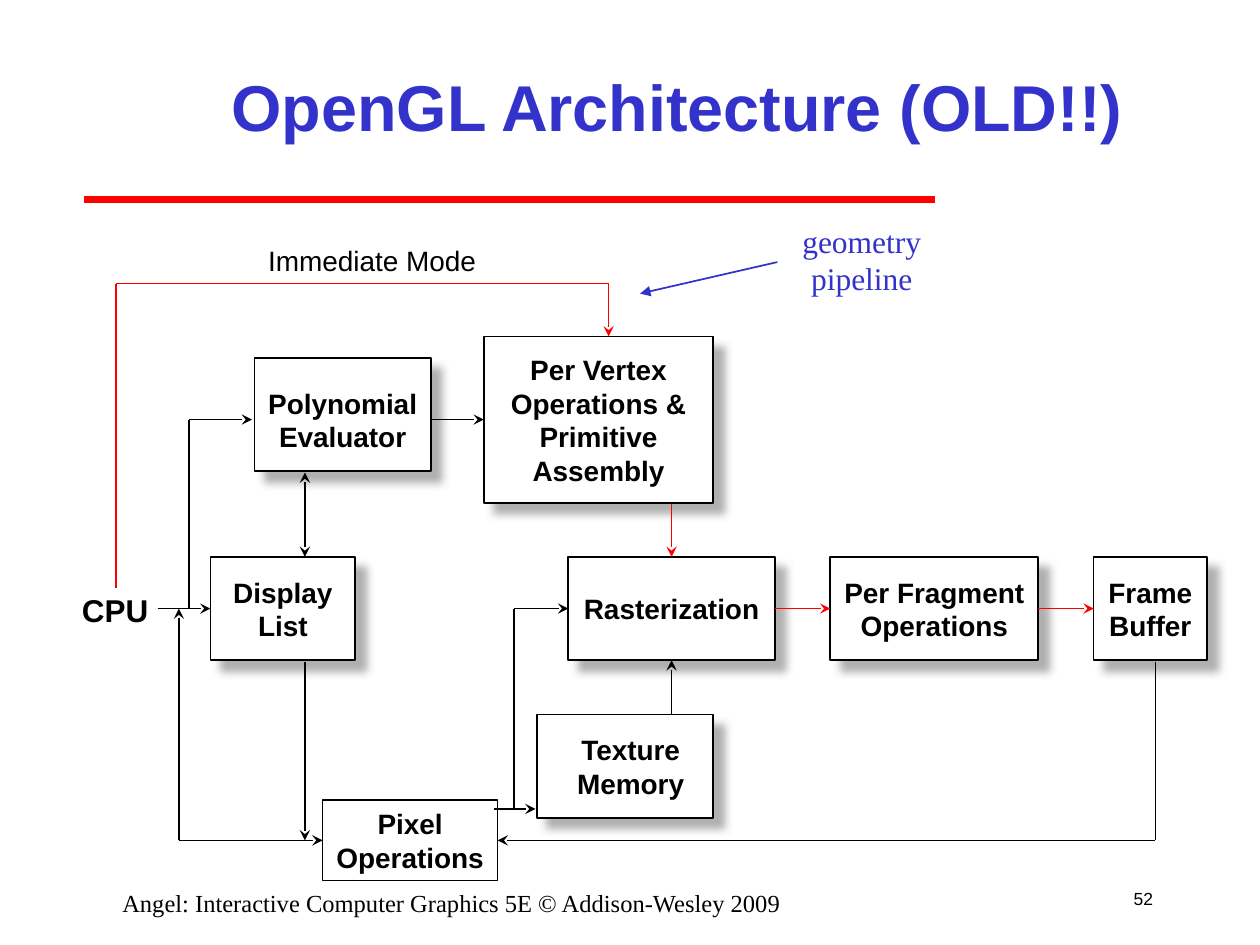
from lxml import etree
from pptx import Presentation, util as u
from pptx.dml import color as c
from pptx.enum import shapes as s, text as t
from pptx.oxml import ns, parse_xml

INK = {"black": "000000", "white": "FFFFFF", "red": "FF0000",
       "blue": "3333CC", "gray": "969696"}
RGB = {name: c.RGBColor.from_string(code) for name, code in INK.items()}
MID, TOP = t.MSO_ANCHOR.MIDDLE, t.MSO_ANCHOR.TOP
LEFT, MIDST, RIGHT = t.PP_ALIGN.LEFT, t.PP_ALIGN.CENTER, t.PP_ALIGN.RIGHT
SHADOW = (f'<a:effectLst {ns.nsdecls("a")}><a:outerShdw blurRad="63500" '
          'dist="107950" dir="2700000" algn="ctr" rotWithShape="0">'
          f'<a:srgbClr val="{INK["gray"]}"><a:alpha val="75000"/></a:srgbClr>'
          '</a:outerShdw></a:effectLst>')

deck = Presentation()
deck.slide_width, deck.slide_height = u.Inches(10), u.Inches(7.5)
slide = deck.slides.add_slide(deck.slide_layouts[6])


def write(shape, words, size, ink="black", face="Arial", bold=False,
          align=MIDST, **frame):
    """Fill a shape with one paragraph per line of words."""
    tf = shape.text_frame
    for key, val in {"word_wrap": True, "vertical_anchor": MID, **frame}.items():
        setattr(tf, key, val)
    tf.text = words
    for para in tf.paragraphs:
        para.alignment = align
        form = {"size": u.Pt(size), "name": face, "bold": bold}
        for key, val in form.items():
            setattr(para.font, key, val)
        para.font.color.rgb = RGB[ink]


def draw(start, end, ink="black", head=None, tail=None, width=1):
    """Draw a straight line, with arrowheads at its start and end."""
    line = slide.shapes.add_connector(
        s.MSO_CONNECTOR.STRAIGHT, *map(u.Inches, start + end))
    line.line.color.rgb = RGB[ink]
    line.line.width = u.Pt(width)
    edge = line.line._get_or_add_ln()
    for tag, kind in (("a:headEnd", head), ("a:tailEnd", tail)):
        if kind:
            etree.SubElement(edge, ns.qn(tag), type=kind)
    etree.SubElement(line._element.spPr, ns.qn("a:effectLst"))
    return line


# Rule under the title
draw((0.67, 1.58), (7.42, 1.58), "red", width=4)

# Title, footer, page number and free labels
labels = [
    ((1.5, 0.25, 7.75, 1.17), "OpenGL Architecture (OLD!!)", 37,
     {"ink": "blue", "bold": True}),
    ((0.5, 7, 6.17, 0.25),
     "Angel: Interactive Computer Graphics 5E © Addison-Wesley 2009", 14,
     {"face": "Times New Roman", "vertical_anchor": TOP}),
    ((8.83, 6.92, 0.42, 0.42), "52", 10, {"align": RIGHT, "word_wrap": False}),
    ((2.03, 1.88, 3.02, 0.37), "Immediate Mode", 16, {"align": LEFT}),
    ((0.55, 4.64, 0.73, 0.4), "CPU", 18, {"bold": True, "word_wrap": False}),
    ((6.11, 1.71, 1.46, 0.9), "geometry\npipeline", 18,
     {"ink": "blue", "face": "Times New Roman", "vertical_anchor": TOP}),
]
for place, words, size, form in labels:
    write(slide.shapes.add_textbox(*map(u.Inches, place)), words, size, **form)

# Stages of the pipeline
stages = {
    "list": ((1.67, 4.42, 1.15, 0.82), "Display\nList"),
    "frag": ((6.59, 4.42, 1.65, 0.82), "Per Fragment\nOperations"),
    "rast": ((4.51, 4.42, 1.64, 0.82), "Rasterization"),
    "tex": ((4.26, 5.67, 1.4, 0.82), "Texture\nMemory"),
    "vert": ((3.84, 2.67, 1.82, 1.32),
             "Per Vertex\nOperations &\nPrimitive\nAssembly"),
    "poly": ((2.02, 2.84, 1.4, 0.9), "Polynomial\nEvaluator"),
    "frame": ((8.68, 4.42, 0.9, 0.82), "Frame\nBuffer"),
    "pix": ((2.56, 6.35, 1.39, 0.64), "Pixel\nOperations"),
}
inset = {"poly": {"margin_top": u.Inches(0.13)},
         "tex": {"margin_left": u.Inches(0.19)}}
box = {}
for name, (place, words) in stages.items():
    rect = slide.shapes.add_shape(s.MSO_SHAPE.RECTANGLE, *map(u.Inches, place))
    rect.line.color.rgb = RGB["black"]
    if name == "pix":
        rect.fill.background()
        rect.line.width = u.Pt(0.75)
        rect.shadow.inherit = False
    else:
        rect.fill.solid()
        rect.fill.fore_color.rgb = RGB["white"]
        rect.line.width = u.Pt(1)
        rect._element.spPr.append(parse_xml(SHADOW))
    write(rect, words, 16, bold=True, word_wrap=False, **inset.get(name, {}))
    box[name] = rect

# Flow lines: start, end, colour, head, tail, joined start, joined end
barb = "stealth"
flows = [
    ((8.25, 4.83), (8.67, 4.83), "red", None, barb, ("frag", 3), ("frame", 1)),
    ((6.17, 4.83), (6.58, 4.83), "red", None, barb, ("rast", 3), ("frag", 1)),
    ((5.33, 4), (5.33, 4.42), "red", None, barb, None, ("rast", 0)),
    ((3.42, 3.33), (3.83, 3.33), "black", None, barb, None, ("vert", 1)),
    ((5.33, 5.25), (5.33, 5.67), "black", barb, None, ("rast", 2), None),
    ((1.25, 4.83), (1.67, 4.83), "black", None, barb, None, ("list", 1)),
    ((1.5, 4.83), (1.5, 3.33), "black", None, None, None, None),
    ((1.5, 3.33), (2, 3.33), "black", None, barb, None, None),
    ((1.42, 4.83), (1.42, 6.67), "black", barb, None, None, None),
    ((1.42, 6.67), (2.58, 6.67), "black", None, barb, None, ("pix", 1)),
    ((9.17, 5.25), (9.17, 6.67), "black", None, None, None, None),
    ((2.42, 3.75), (2.42, 4.42), "black", barb, barb, None, None),
    ((2.42, 5.25), (2.42, 6.67), "black", None, barb, None, None),
    ((3.92, 6.42), (4.25, 6.42), "black", None, barb, None, None),
    ((4.08, 6.42), (4.08, 4.83), "black", None, None, None, None),
    ((4.08, 4.83), (4.5, 4.83), "black", None, barb, None, ("rast", 1)),
    ((4.83, 2.25), (4.83, 2.67), "red", None, barb, None, None),
    ((4.83, 2.25), (0.92, 2.25), "red", None, None, None, None),
    ((0.92, 2.25), (0.92, 4.67), "red", None, None, None, None),
    ((3.92, 6.67), (9.17, 6.67), "black", barb, None, ("pix", 3), None),
    ((6.17, 2.08), (5.08, 2.33), "blue", None, "triangle", None, None),
]
for start, end, ink, head, tail, join, stop in flows:
    line = draw(start, end, ink, head, tail)
    if join:
        line.begin_connect(box[join[0]], join[1])
    if stop:
        line.end_connect(box[stop[0]], stop[1])

deck.save("out.pptx")
